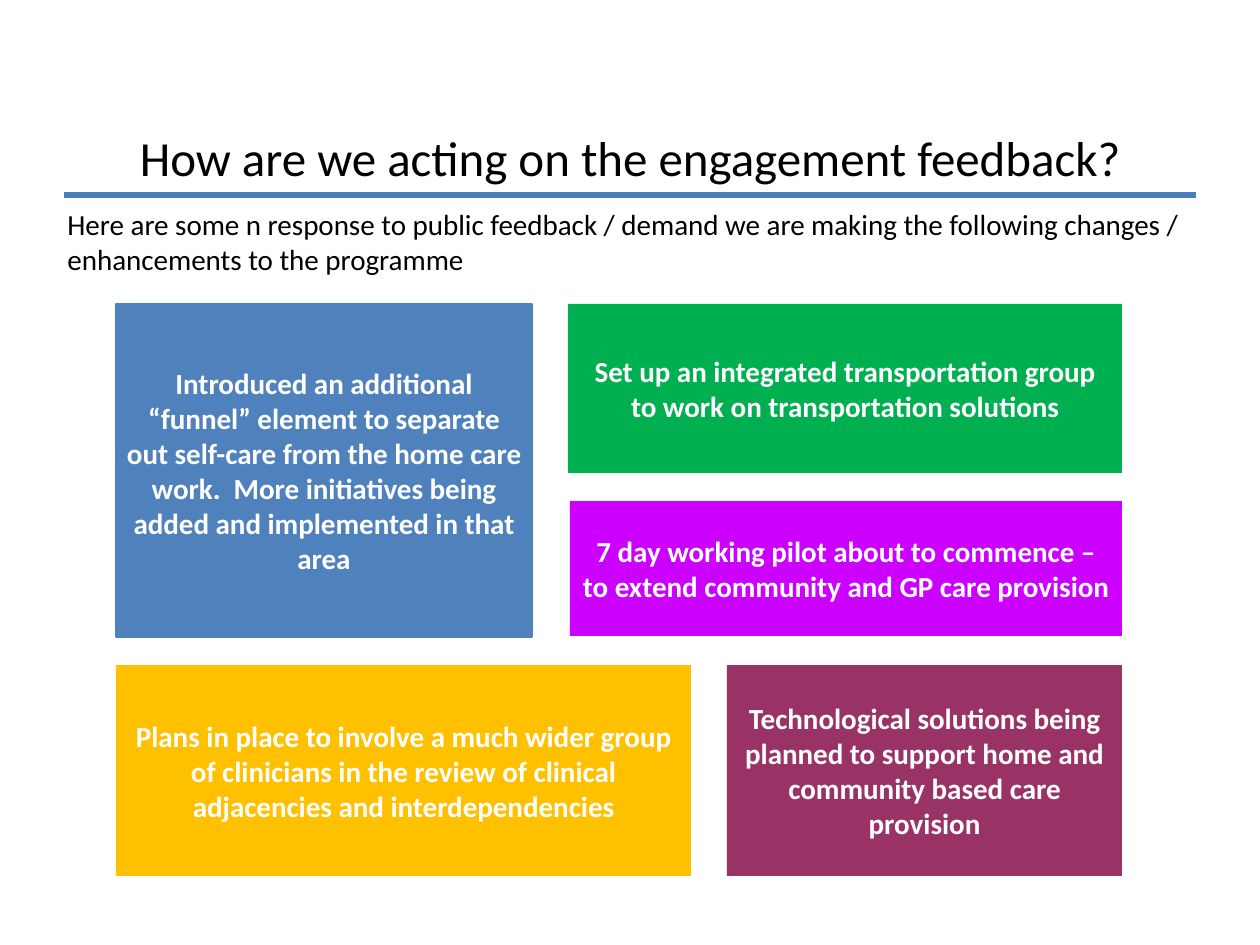
from lxml.etree import SubElement
from pptx import Presentation
from pptx.dml.color import RGBColor
from pptx.enum.shapes import MSO_CONNECTOR, MSO_SHAPE
from pptx.enum.text import MSO_ANCHOR, PP_ALIGN
from pptx.oxml.ns import qn
from pptx.util import Pt

PX = 914400 / 126  # EMU in one px
WIDTH, HEIGHT = 1260, 945
FONT = "Calibri"
BODY_SIZE = 16.6

BLACK = RGBColor(0x00, 0x00, 0x00)
WHITE = RGBColor(0xFF, 0xFF, 0xFF)
RULE_BLUE = RGBColor(0x4B, 0x7E, 0xBC)
BLUE = RGBColor(0x4F, 0x81, 0xBD)
GREEN = RGBColor(0x00, 0xB0, 0x50)
MAGENTA = RGBColor(0xCC, 0x00, 0xFF)
AMBER = RGBColor(0xFF, 0xC0, 0x00)
PLUM = RGBColor(0x99, 0x33, 0x66)

# Left, top, width, height within the grid; fill; outline; wording
ACTIONS = [
    (0, 0, 416, 333, BLUE, True,
     "Introduced an additional “funnel” element to separate out self-care "
     "from the home care work.  More initiatives being added and "
     "implemented in that area"),
    (452, 0, 554, 169, GREEN, False,
     "Set up an integrated transportation group to work on "
     "transportation solutions"),
    (454, 197, 552, 135, MAGENTA, False,
     "7 day working pilot about to commence – to extend community and "
     "GP care provision"),
    (0, 361, 575, 211, AMBER, False,
     "Plans in place to involve a much wider group of clinicians in the "
     "review of clinical adjacencies and interdependencies"),
    (611, 361, 395, 211, PLUM, False,
     "Technological solutions being planned to support home and "
     "community based care provision"),
]


def emu(*lengths):
    return [round(n * PX) for n in lengths]


def write(shape, text, size, color, bold=False,
          align=PP_ALIGN.CENTER, anchor=MSO_ANCHOR.MIDDLE):
    tf = shape.text_frame
    tf.word_wrap = True
    tf.vertical_anchor = anchor
    p = tf.paragraphs[0]
    p.text = text
    p.alignment = align
    p.font.name = FONT
    p.font.size = Pt(size)
    p.font.bold = bold
    p.font.color.rgb = color
    return tf


def add_header(s, x, y, w, h):
    # Title
    title = s.shapes.add_textbox(*emu(x, y, w, h))
    write(title, "How are we acting on the engagement feedback?", 28, BLACK)

    # Rule below the title
    rule_y = y + h - 2
    rule = s.shapes.add_connector(
        MSO_CONNECTOR.STRAIGHT, *emu(x + 1, rule_y, x + w - 1, rule_y))
    rule.line.color.rgb = RULE_BLUE
    rule.line.width = Pt(3)
    SubElement(rule._element.spPr, qn("a:effectLst"))


def add_intro(s, x, y, w, h):
    intro = s.shapes.add_textbox(*emu(x, y, w, h))
    write(intro,
          "Here are some n response to public feedback / demand we are making "
          "the following changes / enhancements to the programme",
          BODY_SIZE, BLACK, align=PP_ALIGN.LEFT, anchor=MSO_ANCHOR.TOP)


def add_actions(s, x, y):
    for left, top, w, h, fill, outlined, text in ACTIONS:
        sp = s.shapes.add_shape(
            MSO_SHAPE.RECTANGLE, *emu(x + left, y + top, w, h))
        sp.shadow.inherit = False
        sp.fill.solid()
        sp.fill.fore_color.rgb = fill
        if outlined:
            sp.line.color.rgb = fill
            sp.line.width = Pt(0.75)
        else:
            sp.line.fill.background()
        tf = write(sp, text, BODY_SIZE, WHITE, bold=True)
        inset, = emu(11)
        tf.margin_left = tf.margin_right = inset
        tf.margin_top = tf.margin_bottom = inset


def main():
    prs = Presentation()
    prs.slide_width, prs.slide_height = emu(WIDTH, HEIGHT)
    s = prs.slides.add_slide(prs.slide_layouts[6])
    add_header(s, 63, 116, 1134, 81)
    add_actions(s, 116, 304)
    add_intro(s, 55, 200, 1142, 83)
    prs.save("out.pptx")


if __name__ == "__main__":
    main()
